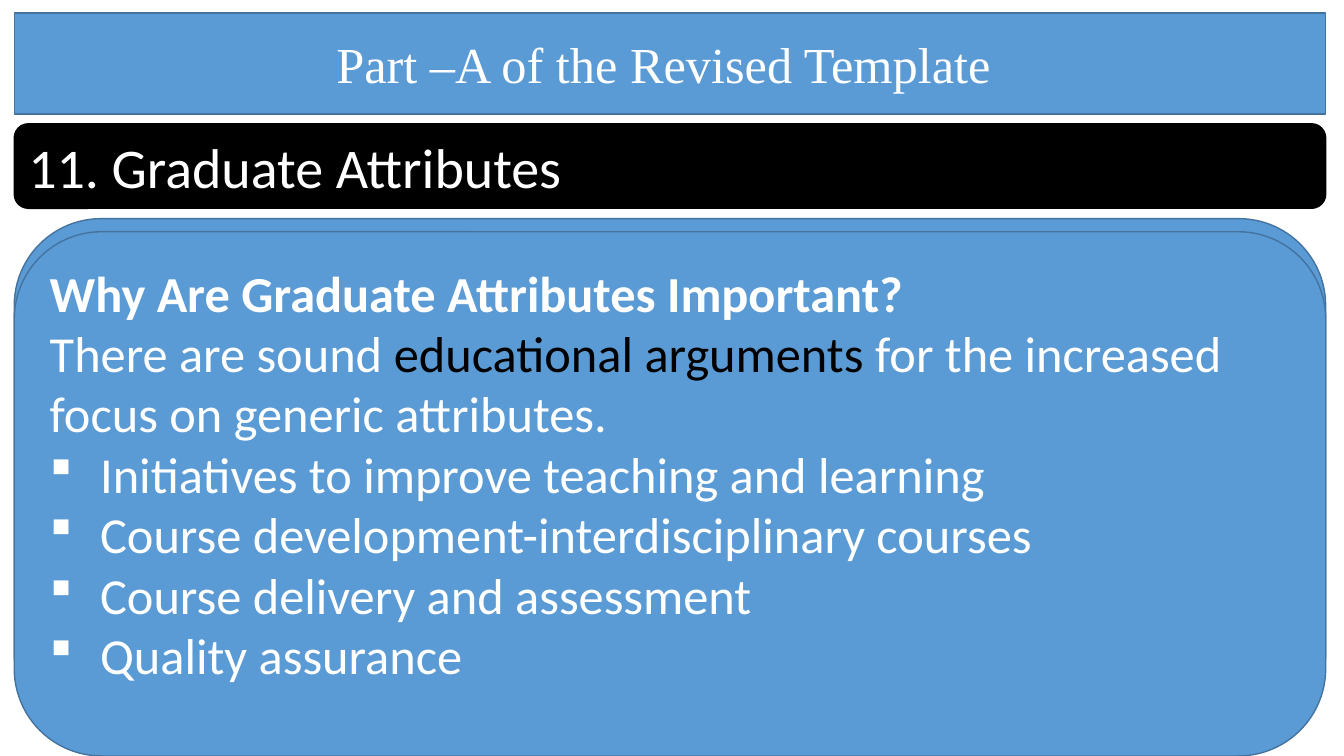
from lxml.etree import SubElement
from pptx import Presentation
from pptx.dml.color import RGBColor
from pptx.enum.shapes import MSO_SHAPE
from pptx.enum.text import MSO_ANCHOR, MSO_AUTO_SIZE, PP_ALIGN
from pptx.oxml.ns import qn
from pptx.util import Cm, Pt

WHITE = RGBColor(0xFF, 0xFF, 0xFF)
BLACK = RGBColor(0, 0, 0)
BLUE = RGBColor(0x5B, 0x9B, 0xD5)
EDGE = RGBColor(0x43, 0x73, 0x9E)

TITLE = "Part –A of the Revised Template "
SECTION = "11. Graduate Attributes"
QUESTION = "Why Are Graduate Attributes Important?"
ARGUMENT = [
    ("There are sound ", WHITE),
    ("educational arguments ", BLACK),
    ("for the increased focus on generic attributes.", WHITE),
]
REASONS = [
    "Initiatives to improve teaching and learning",
    "Course development-interdisciplinary courses",
    "Course delivery and assessment",
    "Quality assurance",
]

LEFT, WIDTH = 0.36, 33.05
TITLE_SPAN = (0.33, 2.54)
SECTION_SPAN = (3.12, 2.13)
BACK_SPAN = (5.51, 13.13)
FRONT_SPAN = (5.84, 13.21)


def style_panel(shape, span, fill, edge):
    top, height = span
    shape.left, shape.top = Cm(LEFT), Cm(top)
    shape.width, shape.height = Cm(WIDTH), Cm(height)
    shape.fill.solid()
    shape.fill.fore_color.rgb = fill
    shape.line.color.rgb = edge
    shape.line.width = Pt(1)
    shape.shadow.inherit = False
    frame = shape.text_frame
    frame.word_wrap = True
    frame.auto_size = MSO_AUTO_SIZE.NONE
    frame.vertical_anchor = MSO_ANCHOR.MIDDLE
    return frame


def add_panel(page, span, fill, edge):
    top, height = span
    shape = page.shapes.add_shape(
        MSO_SHAPE.ROUNDED_RECTANGLE, Cm(LEFT), Cm(top), Cm(WIDTH), Cm(height))
    return style_panel(shape, span, fill, edge)


def write(para, spans, size=36, font="Calibri", bold=False, align=PP_ALIGN.LEFT):
    para.alignment = align
    for text, color in spans:
        span = para.add_run()
        span.text = text
        span.font.size = Pt(size)
        span.font.name = font
        span.font.bold = bold
        span.font.color.rgb = color


def add_bullet(para):
    props = para._p.get_or_add_pPr()
    props.set("marL", str(Cm(1.27)))
    props.set("indent", str(-Cm(1.27)))
    SubElement(props, qn("a:buFont"), typeface="Wingdings")
    SubElement(props, qn("a:buChar"), char="§")


def main():
    deck = Presentation()
    deck.slide_width, deck.slide_height = Cm(33.87), Cm(19.05)
    page = deck.slides.add_slide(deck.slide_layouts[5])

    title = page.shapes.title
    frame = style_panel(title, TITLE_SPAN, BLUE, EDGE)
    outline = SubElement(title._element.spPr, qn("a:prstGeom"), prst="roundRect")
    SubElement(outline, qn("a:avLst"))
    title._element.spPr.insert(1, outline)
    write(frame.paragraphs[0], [(TITLE, WHITE)],
          font="Times New Roman", align=PP_ALIGN.CENTER)

    frame = add_panel(page, SECTION_SPAN, BLACK, BLACK)
    write(frame.paragraphs[0], [(SECTION, WHITE)], size=40)

    add_panel(page, BACK_SPAN, BLUE, EDGE)
    frame = add_panel(page, FRONT_SPAN, BLUE, EDGE)
    frame.margin_bottom = Cm(1.16)
    write(frame.paragraphs[0], [(QUESTION, WHITE)], bold=True)
    write(frame.add_paragraph(), ARGUMENT)
    for reason in REASONS:
        para = frame.add_paragraph()
        write(para, [(reason, WHITE)])
        add_bullet(para)

    deck.save("out.pptx")


if __name__ == "__main__":
    main()
